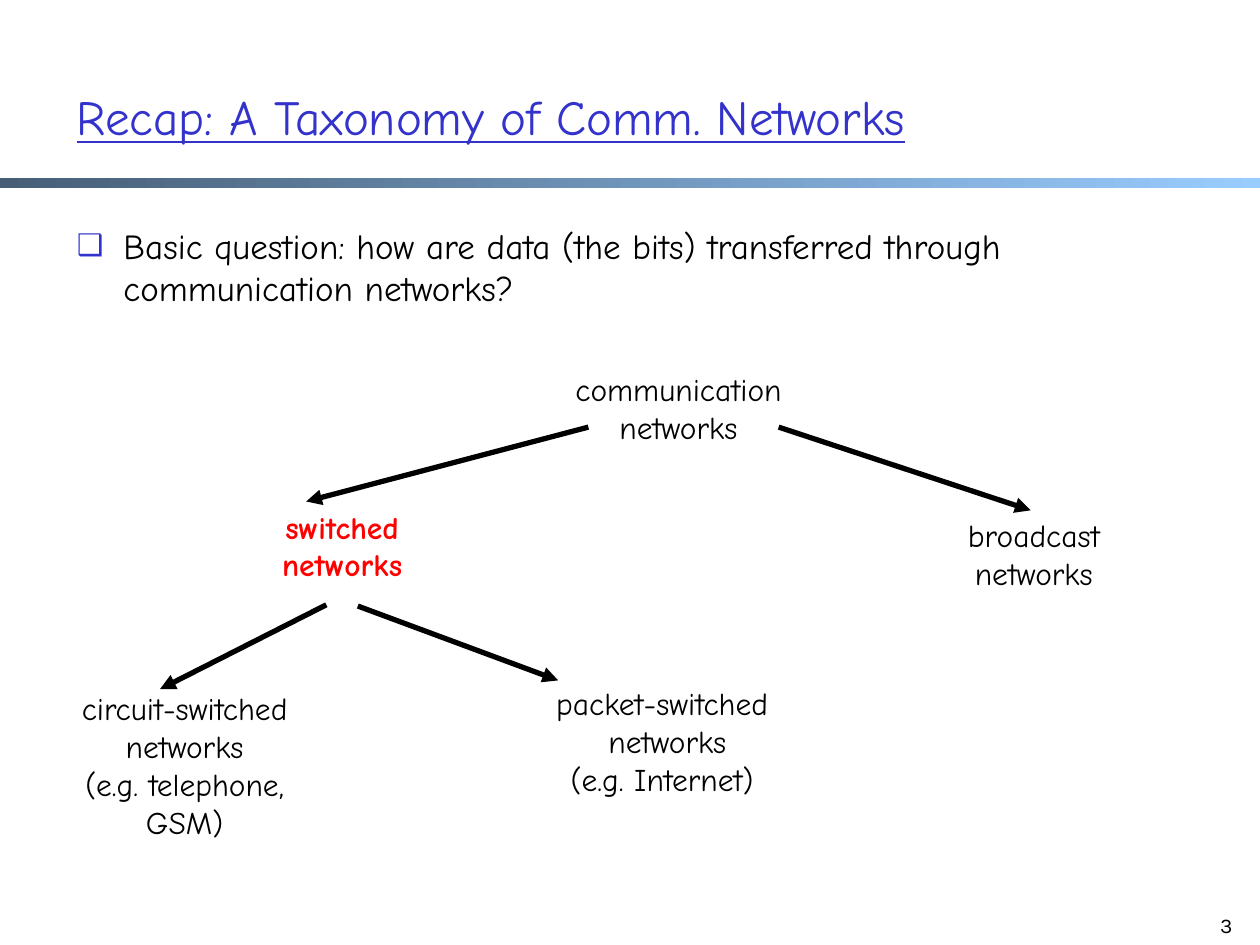
from dataclasses import dataclass

from lxml.etree import SubElement
from pptx import Presentation
from pptx.dml.color import RGBColor
from pptx.enum.shapes import MSO_CONNECTOR, MSO_SHAPE
from pptx.enum.text import MSO_ANCHOR, MSO_AUTO_SIZE, PP_ALIGN
from pptx.oxml.ns import qn
from pptx.util import Inches, Pt


@dataclass(frozen=True)
class Theme:
    font: str = "Comic Neue"
    number_font: str = "Karla"
    accent: str = "3333CC"
    text: str = "000000"
    highlight: str = "FF0000"
    bar: tuple = ("475E76", "99CCFF")
    title_size: int = 28
    body_size: int = 20
    node_size: int = 18
    number_size: int = 12
    arrow_width: int = 3


THEME = Theme()

TITLE = "Recap: A Taxonomy of Comm. Networks"
QUESTION = ("Basic question: how are data (the bits) transferred "
            "through communication networks?")
PAGE_NUMBER = "3"

# text, (left, top, width, height), highlighted
NODES = [
    ("communication networks", (4.26, 2.89, 2.25, 0.7), False),
    ("switched\nnetworks", (1.59, 3.98, 2.25, 0.7), True),
    ("broadcast\nnetworks", (7.08, 4.05, 2.25, 0.7), False),
    ("circuit-switched\nnetworks\n(e.g. telephone, GSM)",
     (0.34, 5.42, 2.25, 1.31), False),
    ("packet-switched\n networks\n(e.g. Internet)",
     (3.43, 5.38, 3.65, 1.01), False),
]

# start, end
ARROWS = [
    ((4.67, 3.39), (2.43, 3.98)),
    ((6.18, 3.39), (8.18, 4.05)),
    ((2.59, 4.8), (1.27, 5.47)),
    ((2.84, 4.81), (4.43, 5.4)),
]


def rgb(value):
    return RGBColor.from_string(value)


def place(sp, box):
    sp.left, sp.top, sp.width, sp.height = map(Inches, box)


def write(sp, text, size, color=THEME.text, font=THEME.font,
          align=PP_ALIGN.LEFT, anchor=MSO_ANCHOR.TOP, bold=False,
          underline=False):
    """Fill the shape with one paragraph; newlines become line breaks."""
    tf = sp.text_frame
    tf.word_wrap = True
    tf.auto_size = MSO_AUTO_SIZE.NONE
    tf.vertical_anchor = anchor
    p = tf.paragraphs[0]
    p.text = text
    p.alignment = align
    for r in p.runs:
        r.font.name = font
        r.font.size = Pt(size)
        r.font.color.rgb = rgb(color)
        r.font.bold = bold
        r.font.underline = underline
    return p


def add_bullet(p, char, color, percent, indent):
    pPr = p._p.get_or_add_pPr()
    pPr.set("marL", str(Inches(indent)))
    pPr.set("indent", str(-Inches(indent)))
    SubElement(SubElement(pPr, qn("a:buClr")), qn("a:srgbClr"), val=color)
    SubElement(pPr, qn("a:buSzPct"), val=str(percent * 1000))
    SubElement(pPr, qn("a:buChar"), char=char)


def add_bar(s):
    bar = s.shapes.add_shape(MSO_SHAPE.RECTANGLE, 0, Inches(1.41),
                             Inches(10), Inches(0.08))
    bar.shadow.inherit = False
    bar.line.fill.background()
    bar.fill.gradient()
    bar.fill.gradient_angle = 0
    for stop, position, color in zip(bar.fill.gradient_stops, (0, 1), THEME.bar):
        stop.position = position
        stop.color.rgb = rgb(color)


def add_arrow(s, start, end):
    line = s.shapes.add_connector(MSO_CONNECTOR.STRAIGHT,
                                  *map(Inches, start + end))
    line.line.color.rgb = rgb(THEME.text)
    line.line.width = Pt(THEME.arrow_width)
    SubElement(line.line._get_or_add_ln(), qn("a:tailEnd"), type="triangle")
    SubElement(line._element.spPr, qn("a:effectLst"))


def main():
    prs = Presentation()
    prs.slide_width, prs.slide_height = Inches(10), Inches(7.5)
    s = prs.slides.add_slide(prs.slide_layouts[1])
    add_bar(s)

    title, body = s.placeholders
    place(title, (0.51, 0.59, 8.5, 0.66))
    write(title, TITLE, THEME.title_size, THEME.accent,
          anchor=MSO_ANCHOR.MIDDLE, underline=True)
    place(body, (0.51, 1.73, 8.99, 0.9))
    p = write(body, QUESTION, THEME.body_size)
    add_bullet(p, "❑", THEME.accent, percent=85, indent=0.37)

    for text, box, highlighted in NODES:
        node = s.shapes.add_textbox(*map(Inches, box))
        write(node, text, THEME.node_size,
              THEME.highlight if highlighted else THEME.text,
              align=PP_ALIGN.CENTER, bold=highlighted)
    for start, end in ARROWS:
        add_arrow(s, start, end)

    number = s.shapes.add_textbox(*map(Inches, (9.38, 7.19, 0.5, 0.3)))
    write(number, PAGE_NUMBER, THEME.number_size, font=THEME.number_font,
          align=PP_ALIGN.RIGHT)
    prs.save("out.pptx")


if __name__ == "__main__":
    main()
